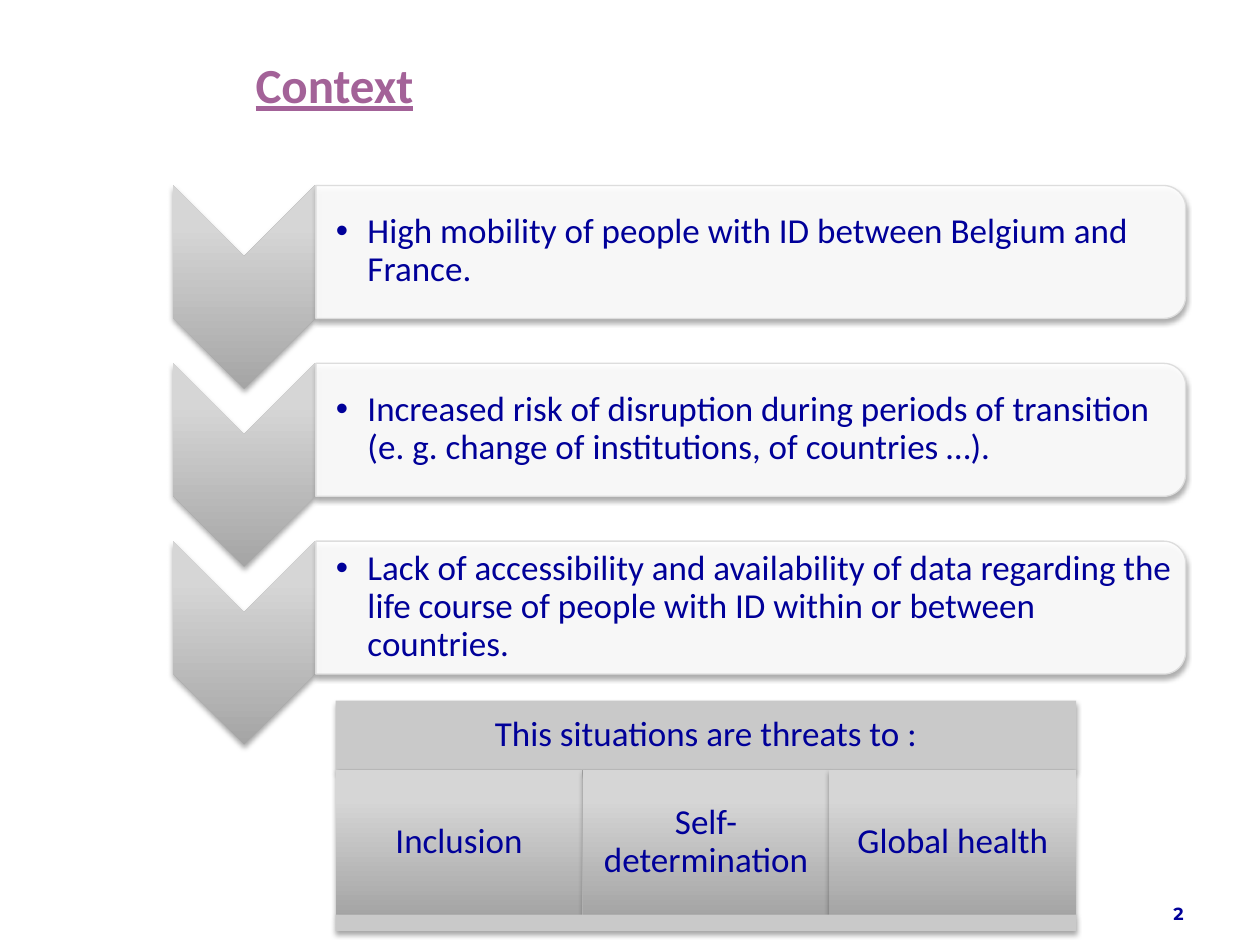
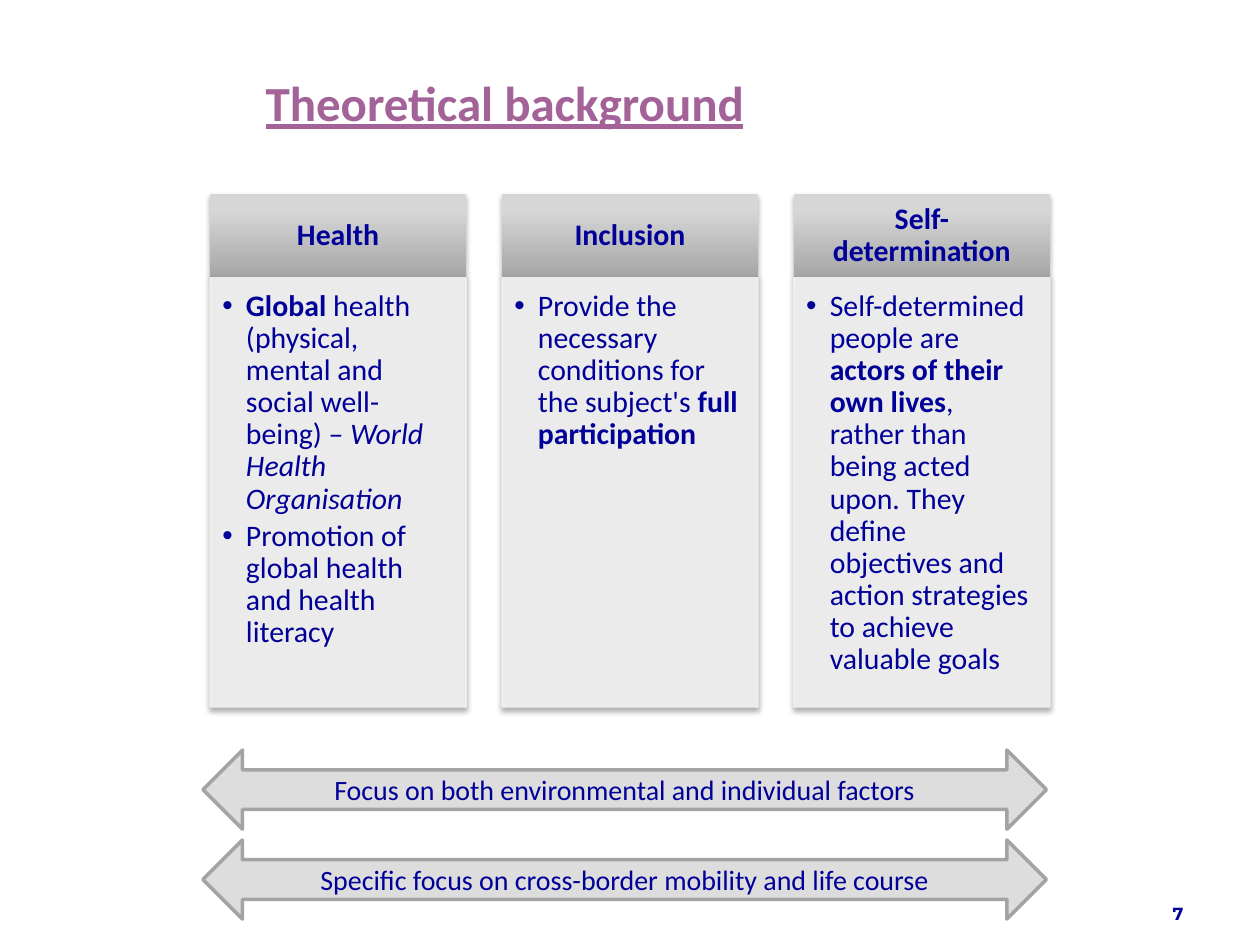
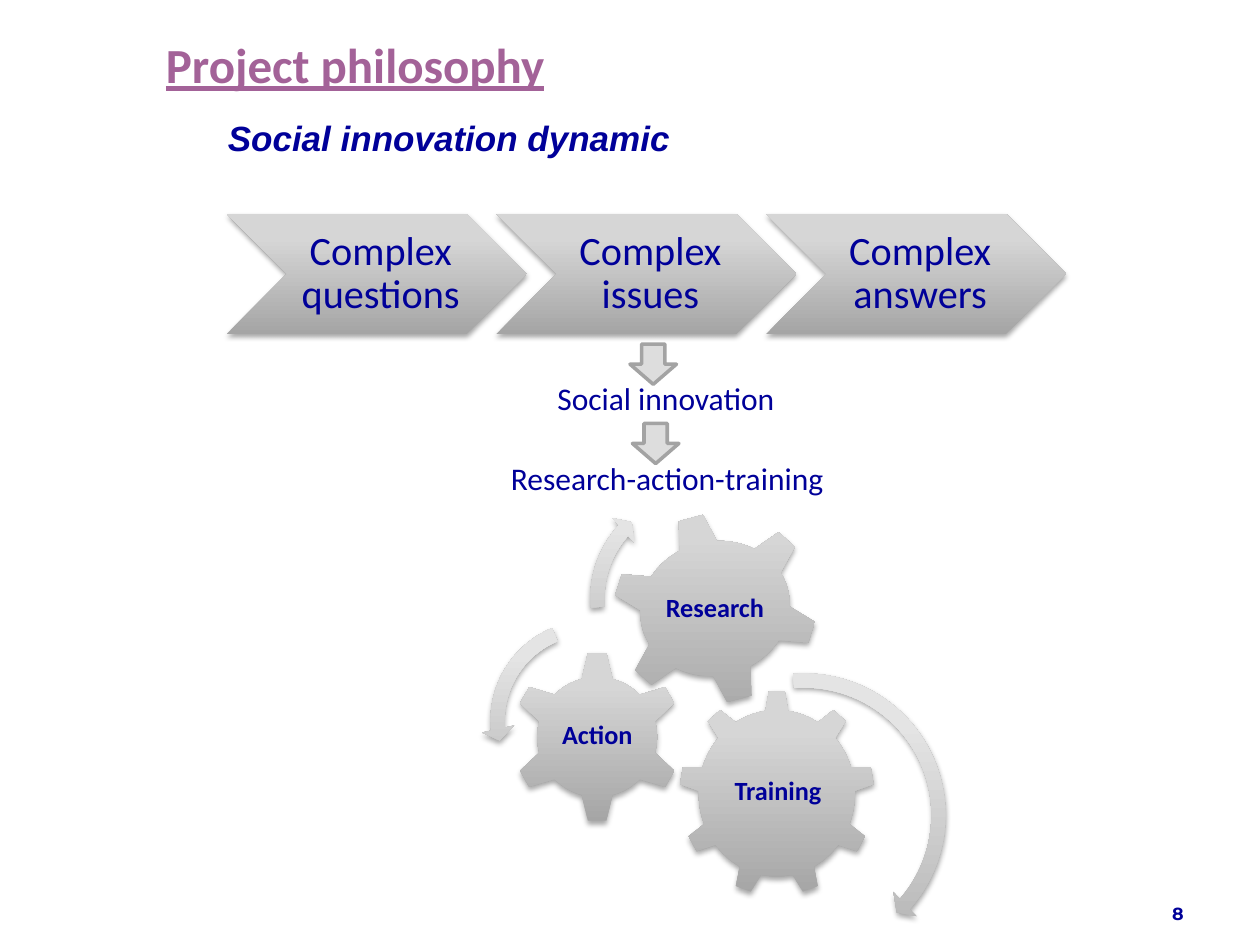
from copy import deepcopy

from lxml import etree
from pptx import Presentation
from pptx.dml.color import RGBColor
from pptx.enum.shapes import MSO_SHAPE
from pptx.enum.text import MSO_ANCHOR, PP_ALIGN
from pptx.oxml.ns import qn
from pptx.util import Pt

RECTANGLE = MSO_SHAPE.RECTANGLE
CHEVRON = MSO_SHAPE.CHEVRON
ROUND_TOP = MSO_SHAPE.ROUND_2_SAME_RECTANGLE
DOUBLE_ARROW = MSO_SHAPE.LEFT_RIGHT_ARROW
DOWN_ARROW = MSO_SHAPE.DOWN_ARROW
GEAR_SIX = MSO_SHAPE.GEAR_6
GEAR_NINE = MSO_SHAPE.GEAR_9
TURN_RIGHT = MSO_SHAPE.CIRCULAR_ARROW
TURN_LEFT = MSO_SHAPE.LEFT_CIRCULAR_ARROW
LEFT, CENTER, RIGHT = PP_ALIGN.LEFT, PP_ALIGN.CENTER, PP_ALIGN.RIGHT
TOP, MIDDLE = MSO_ANCHOR.TOP, MSO_ANCHOR.MIDDLE

NAVY = "000099"
PLUM = "A36298"
BAND_GRAY = "C9C9C9"
ARROW_GRAY = "DDDDDD"
ARROW_EDGE = "A3A3A3"
PANEL_GRAY = "F2F2F2"
WHITE = "FFFFFF"
STEEL = ((0, "A5A5A5"), (0.8, "D6D6D6"), (1, "D7D7D7"))
SILVER = ((0, "B0B0B0"), (0.8, "E4E4E4"), (1, "E5E5E5"))
DEFAULT_INSETS = (7.2, 3.6, 7.2, 3.6)


def color(value):
    return RGBColor.from_string(value)


def add_element(parent, tag, **attributes):
    element = etree.SubElement(parent, qn(tag))
    for name, value in attributes.items():
        element.set(name, str(value))
    return element


class Deck:
    def __init__(self):
        self.presentation = Presentation()
        self.presentation.slide_width = Pt(720)
        self.presentation.slide_height = Pt(540)
        self.slide = None

    def new_slide(self, number):
        layout = self.presentation.slide_layouts[6]
        self.slide = self.presentation.slides.add_slide(layout)
        self.text(number, 638, 507.6, 45.4, 28.8, size=10, font="Montserrat",
                  bold=True, align=RIGHT)

    def title(self, text, left, top, insets=DEFAULT_INSETS):
        self.text(text, left, top, 568, 66, size=28, bold=True, underline=True,
                  ink=PLUM, align=LEFT, insets=insets)

    def text(self, content, left, top, width, height, wrap=True, **style):
        box = self.slide.shapes.add_textbox(Pt(left), Pt(top), Pt(width), Pt(height))
        self.set_text(box, content, **style)
        box.text_frame.word_wrap = wrap

    def shape(self, kind, left, top, width, height, fill, line=None, line_width=0.75,
              opacity=100, line_opacity=100, rotation=0, shadow=True, adjustments=()):
        shape = self.slide.shapes.add_shape(kind, Pt(left), Pt(top), Pt(width), Pt(height))
        shape.rotation = rotation
        for index, value in enumerate(adjustments):
            shape.adjustments[index] = value
        if isinstance(fill, str):
            self.paint(shape.fill, fill)
            self.fade(shape, "a:solidFill", opacity)
        else:
            self.blend(shape, fill)
        if line:
            self.paint(shape.line.fill, line)
            shape.line.width = Pt(line_width)
            self.fade(shape, "a:ln/a:solidFill", line_opacity)
        else:
            shape.line.fill.background()
        shape.shadow.inherit = False
        if shadow:
            self.cast_shadow(shape)
        return shape

    def paint(self, fill, value):
        fill.solid()
        fill.fore_color.rgb = color(value)

    def fade(self, shape, place, opacity):
        if opacity < 100:
            steps = [qn(step) for step in f"{place}/a:srgbClr".split("/")]
            paint = shape.element.spPr.find("/".join(steps))
            add_element(paint, "a:alpha", val=opacity * 1000)

    def blend(self, shape, stops):
        shape.fill.gradient()
        shape.fill.gradient_angle = 90
        gradient = shape.element.spPr.find(qn("a:gradFill"))
        gradient.set("rotWithShape", "0")
        stop_list = gradient.find(qn("a:gsLst"))
        stop_list.append(deepcopy(stop_list[-1]))
        for stop, (position, value) in zip(shape.fill.gradient_stops, stops):
            stop.position = position
            stop.color.rgb = color(value)

    def cast_shadow(self, shape):
        effects = shape.element.spPr.find(qn("a:effectLst"))
        shadow = add_element(effects, "a:outerShdw", blurRad=Pt(3.15), dist=Pt(1.8),
                             dir=5400000, rotWithShape=0)
        paint = add_element(shadow, "a:srgbClr", val="000000")
        add_element(paint, "a:alpha", val=35000)

    def set_text(self, shape, content, size, font="Calibri", ink=NAVY, bold=False,
                 italic=False, underline=False, align=CENTER, anchor=MIDDLE,
                 insets=DEFAULT_INSETS, spacing=1, bullet=0):
        """content: a string, or paragraphs made of (text, style letters) pairs."""
        frame = shape.text_frame
        frame.word_wrap = True
        frame.vertical_anchor = anchor
        (frame.margin_left, frame.margin_top,
         frame.margin_right, frame.margin_bottom) = map(Pt, insets)
        paragraphs = [[(content, "")]] if isinstance(content, str) else content
        for index, pieces in enumerate(paragraphs):
            paragraph = frame.add_paragraph() if index else frame.paragraphs[0]
            if bullet:
                self.add_bullet(paragraph, bullet)
            paragraph.alignment = align
            paragraph.line_spacing = spacing
            for piece, letters in pieces:
                run = paragraph.add_run()
                run.text = piece
                run.font.name = font
                run.font.size = Pt(size)
                run.font.color.rgb = color(ink)
                run.font.bold = bold or "b" in letters
                run.font.italic = italic or "i" in letters
                run.font.underline = underline

    def add_bullet(self, paragraph, indent):
        properties = paragraph._p.get_or_add_pPr()
        properties.set("marL", str(Pt(indent)))
        properties.set("indent", str(-Pt(indent)))
        add_element(properties, "a:buFont", typeface="Arial")
        add_element(properties, "a:buChar", char="•")
        paragraph.space_after = Pt(3)


def build_context(deck):
    deck.new_slide("2")
    deck.title("Context", 139, 15)

    # Three chevrons, each with a statement
    statements = (
        "High mobility of people with ID between Belgium and France.",
        "Increased risk of disruption during periods of transition "
        "(e. g. change of institutions, of countries …).",
        "Lack of accessibility and availability of data regarding the life course "
        "of people with ID within or between countries.",
    )
    for row, statement in enumerate(statements):
        top = 105.7 + row * 101.6
        deck.shape(CHEVRON, 81.2, top + 17.4, 116.6, 81.8, STEEL, rotation=90)
        deck.shape(ROUND_TOP, 391, top - 210.2, 76, 497, WHITE, line="DDDDDD",
                   opacity=90, rotation=90)
        deck.text(statement, 180.7, top + 3.7, 492.5, 68.5, size=20, align=LEFT,
                  insets=(11.3, 0.9, 0.9, 0.9), spacing=0.9, bullet=18)

    # Threats: heading, three cells and a closing band
    left, width = 191.8, 423.2
    cell_width = width / 3
    cell_text = dict(size=20, insets=(5.6,) * 4, spacing=0.9)
    heading = deck.shape(RECTANGLE, left, 400.4, width, 39.5, BAND_GRAY)
    deck.set_text(heading, "This situations are threats to :", **cell_text)
    for column, threat in enumerate(("Inclusion", "Self-determination", "Global health")):
        cell = deck.shape(RECTANGLE, left + column * cell_width, 439.9,
                          cell_width, 82.8, STEEL)
        deck.set_text(cell, threat, **cell_text)
    deck.shape(RECTANGLE, left, 522.7, width, 9.2, BAND_GRAY)


def build_background(deck):
    deck.new_slide("7")
    deck.title("Theoretical background", 144.7, 37.4, insets=(7.2, 3.6, 7.2, 28))

    # Three concept columns
    concepts = (
        ("Health", [
            [("Global", "b"),
             (" health (physical, mental and social well-being) – ", ""),
             ("World Health Organisation", "i")],
            [("Promotion of global health and health literacy", "")]]),
        ("Inclusion", [
            [("Provide the necessary conditions for the subject's ", ""),
             ("full participation", "b")]]),
        ("Self-determination", [
            [("Self-determined people are ", ""),
             ("actors of their own lives", "b"),
             (", rather than being acted upon. They define objectives and "
              "action strategies to achieve valuable goals", "")]]),
    )
    for column, (concept, points) in enumerate(concepts):
        left = 120 + column * 166.8
        heading = deck.shape(RECTANGLE, left, 110.6, 146.4, 48.2, STEEL)
        deck.set_text(heading, concept, size=17, bold=True,
                      insets=(9.5, 5.5, 9.5, 5.5), spacing=0.9)
        panel = deck.shape(RECTANGLE, left, 158.8, 146.4, 245.3, PANEL_GRAY,
                           line=PANEL_GRAY, opacity=90, line_opacity=90)
        deck.set_text(panel, points, size=17, align=LEFT, anchor=TOP,
                      insets=(7.2, 7.2, 9.5, 10.8), spacing=0.9, bullet=13.5)

    # Focus arrows
    focuses = ("Focus on both environmental and individual factors",
               "Specific focus on cross-border mobility and life course")
    for row, focus in enumerate(focuses):
        arrow = deck.shape(DOUBLE_ARROW, 116, 428.6 + row * 51.4, 482, 45.2, ARROW_GRAY,
                           line=ARROW_EDGE, line_width=2, shadow=False)
        deck.set_text(arrow, focus, size=16)


def build_philosophy(deck):
    deck.new_slide("8")
    deck.text("Social innovation dynamic", 123.1, 63, 269.3, 31.5, wrap=False, size=20,
              font="Arial", bold=True, italic=True, align=LEFT)
    deck.title("Project philosophy", 87.8, 3.6)

    # Process chevrons
    for column, step in enumerate(("Complex questions", "Complex issues", "Complex answers")):
        chevron = deck.shape(CHEVRON, 129.6 + column * 154.1, 122.2, 171.4, 68.6, STEEL)
        deck.set_text(chevron, step, size=23, insets=(7.2, 2.4, 2.4, 2.4), spacing=0.9)

    # Results below the chevrons
    deck.text("Social innovation", 310.3, 213.1, 140.4, 28.8, wrap=False, size=18)
    deck.text("Research-action-training", 283.7, 258.5, 195.1, 28.8, wrap=False, size=18)
    for left, top in ((361.4, 241.9), (360, 196.6)):
        deck.shape(DOWN_ARROW, left, top, 26.6, 23, ARROW_GRAY, line=ARROW_EDGE,
                   line_width=2, shadow=False)

    # Gears: kind, frame, rotation, label, label frame
    gears = (
        (GEAR_NINE, (388.1, 394.6, 111.6, 117.4), 0, "Training", (411.1, 421.9, 67, 61.2)),
        (GEAR_SIX, (292.3, 372.2, 97.9, 97.9), 0, "Action", (316.8, 396.7, 49, 48.2)),
        (GEAR_SIX, (349.2, 293, 118.8, 109.4), 345, "Research", (375.8, 316.8, 65.5, 62.6)),
    )
    for kind, frame, rotation, label, label_frame in gears:
        deck.shape(kind, *frame, STEEL, rotation=rotation)
        deck.text(label, *label_frame, size=15, bold=True, insets=(1.5,) * 4, spacing=0.9)

    # Turning arrows: kind, left, top, diameter, adjustments
    turns = (
        (TURN_RIGHT, 373, 379.4, 172.8, (0.047, 2.99, 24.833, 159.34, 0.055)),
        (TURN_LEFT, 275, 349.2, 125.3, (0.065, 4.3, 104.891, 148.378, 0.075)),
        (TURN_RIGHT, 331.9, 274.3, 135.4, (0.06, 3.941, 133.138, 105.082, 0.07)),
    )
    for kind, left, top, diameter, adjustments in turns:
        deck.shape(kind, left, top, diameter, diameter, SILVER, adjustments=adjustments)


def main():
    deck = Deck()
    build_context(deck)
    build_background(deck)
    build_philosophy(deck)
    deck.presentation.save("out.pptx")


if __name__ == "__main__":
    main()
